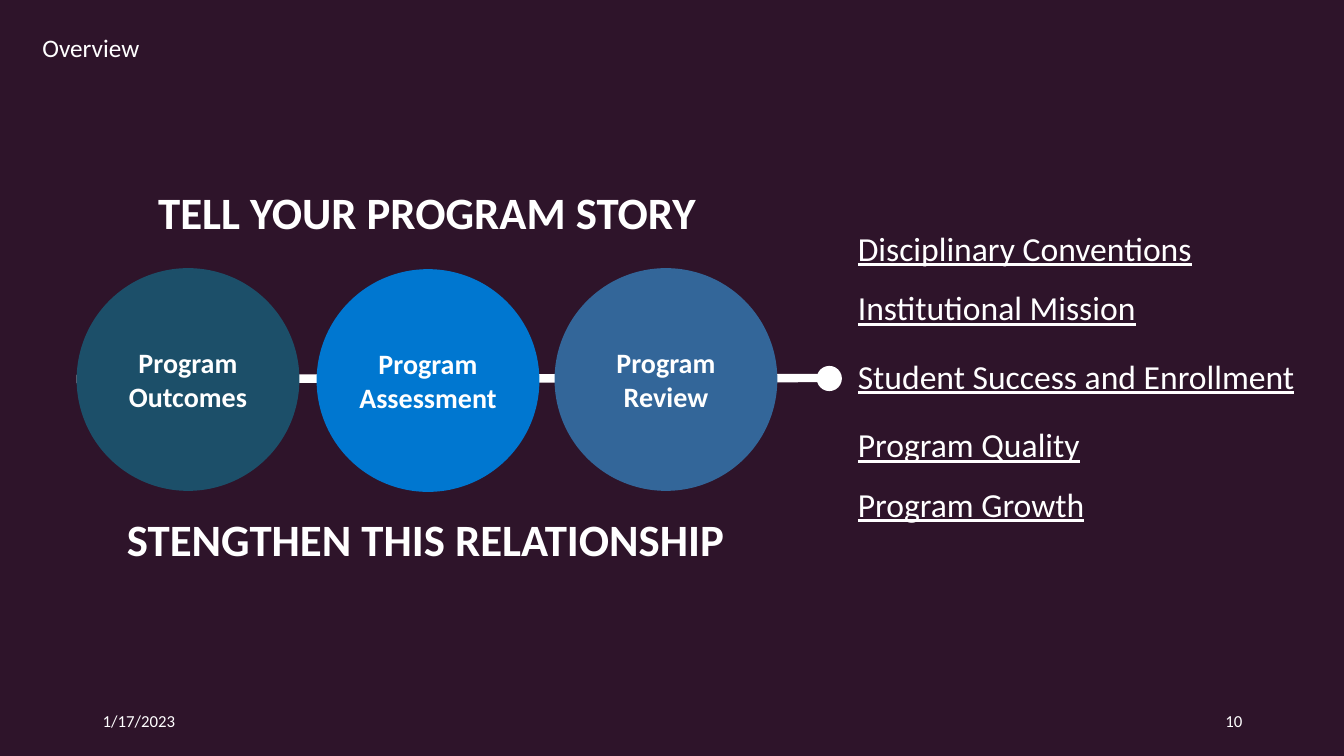
from lxml import etree
from pptx import Presentation
from pptx.dml.color import RGBColor
from pptx.enum.shapes import MSO_CONNECTOR, MSO_SHAPE
from pptx.enum.text import MSO_ANCHOR, MSO_AUTO_SIZE, PP_ALIGN
from pptx.oxml.ns import qn
from pptx.util import Inches, Pt

BACKGROUND = RGBColor(0x2E, 0x14, 0x2A)
WHITE = RGBColor(0xFF, 0xFF, 0xFF)
TEAL = RGBColor(0x1C, 0x4F, 0x69)
BRIGHT_BLUE = RGBColor(0x00, 0x77, 0xD0)
STEEL_BLUE = RGBColor(0x33, 0x66, 0x99)
LEFT, CENTER, RIGHT = PP_ALIGN.LEFT, PP_ALIGN.CENTER, PP_ALIGN.RIGHT
TOP, MIDDLE = MSO_ANCHOR.TOP, MSO_ANCHOR.MIDDLE


def write(box, text, size, bold=False, underline=False, align=LEFT, anchor=TOP):
    frame = box.text_frame
    frame.word_wrap = True
    frame.auto_size = MSO_AUTO_SIZE.NONE
    frame.vertical_anchor = anchor
    para = frame.paragraphs[0]
    para.alignment = align
    span = para.add_run()
    span.text = text
    span.font.name = "Calibri"
    span.font.size = Pt(size)
    span.font.bold = bold
    span.font.underline = underline
    span.font.color.rgb = WHITE


def add_circle(kind, left, top, diameter, color):
    circle = page.shapes.add_shape(
        kind, Inches(left), Inches(top), Inches(diameter), Inches(diameter)
    )
    circle.shadow.inherit = False
    circle.fill.solid()
    circle.fill.fore_color.rgb = color
    circle.line.fill.background()
    return circle


deck = Presentation()
deck.slide_width = Inches(13.33)
deck.slide_height = Inches(7.5)
page = deck.slides.add_slide(deck.slide_layouts[5])
page.background.fill.solid()
page.background.fill.fore_color.rgb = BACKGROUND

title = page.shapes.title
title.left, title.top = Inches(0.32), Inches(0.27)
title.width, title.height = Inches(6.4), Inches(0.4)
write(title, "Overview", 18)

link = page.shapes.add_connector(
    MSO_CONNECTOR.STRAIGHT, Inches(0.76), Inches(3.76), Inches(8.24), Inches(3.75)
)
link.line.color.rgb = WHITE
link.line.width = Pt(6)
etree.SubElement(link._element.spPr, qn("a:effectLst"))

stages = [
    ("Program Outcomes", 0.76, 2.66, TEAL),
    ("Program Assessment", 3.14, 2.67, BRIGHT_BLUE),
    ("Program Review", 5.5, 2.66, STEEL_BLUE),
]
for text, left, top, color in stages:
    stage = add_circle(MSO_SHAPE.FLOWCHART_CONNECTOR, left, top, 2.21, color)
    write(stage, text, 20, bold=True, align=CENTER, anchor=MIDDLE)

add_circle(MSO_SHAPE.OVAL, 8.1, 3.63, 0.25, WHITE)

themes = [
    ("Disciplinary Conventions", 2.21),
    ("Institutional Mission", 2.8),
    ("Student Success and Enrollment", 3.48),
    ("Program Quality", 4.16),
    ("Program Growth", 4.75),
]
for text, top in themes:
    theme = page.shapes.add_textbox(Inches(8.41), Inches(top), Inches(4.9), Inches(0.64))
    write(theme, text, 24, underline=True)

headings = [
    ("TELL YOUR PROGRAM STORY", 1.47, 1.78),
    ("STENGTHEN THIS RELATIONSHIP", 1.16, 5.03),
]
for text, left, top in headings:
    heading = page.shapes.add_textbox(Inches(left), Inches(top), Inches(7.68), Inches(0.64))
    write(heading, text, 32, bold=True)

for text, left, align in [("1/17/2023", 0.92, LEFT), ("10", 9.42, RIGHT)]:
    footer = page.shapes.add_textbox(Inches(left), Inches(6.95), Inches(3), Inches(0.4))
    write(footer, text, 12, align=align, anchor=MIDDLE)

deck.save("out.pptx")
